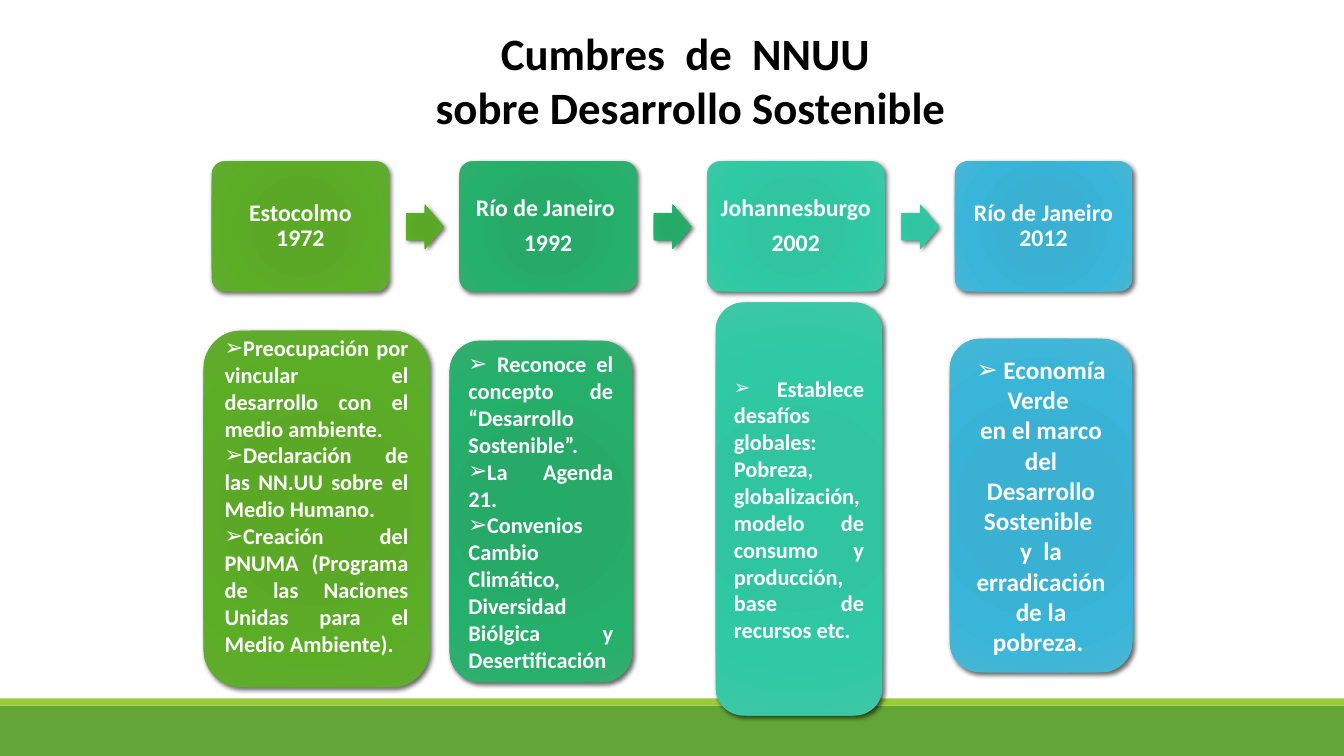
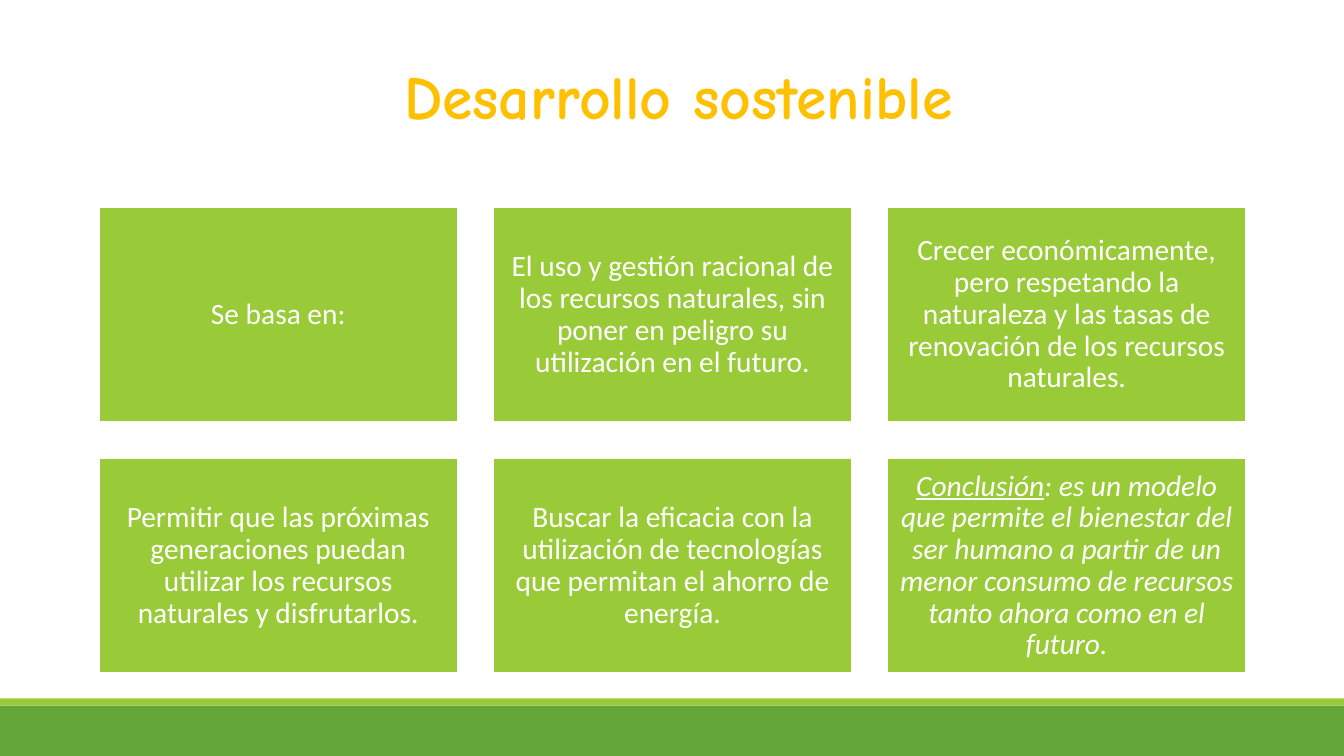
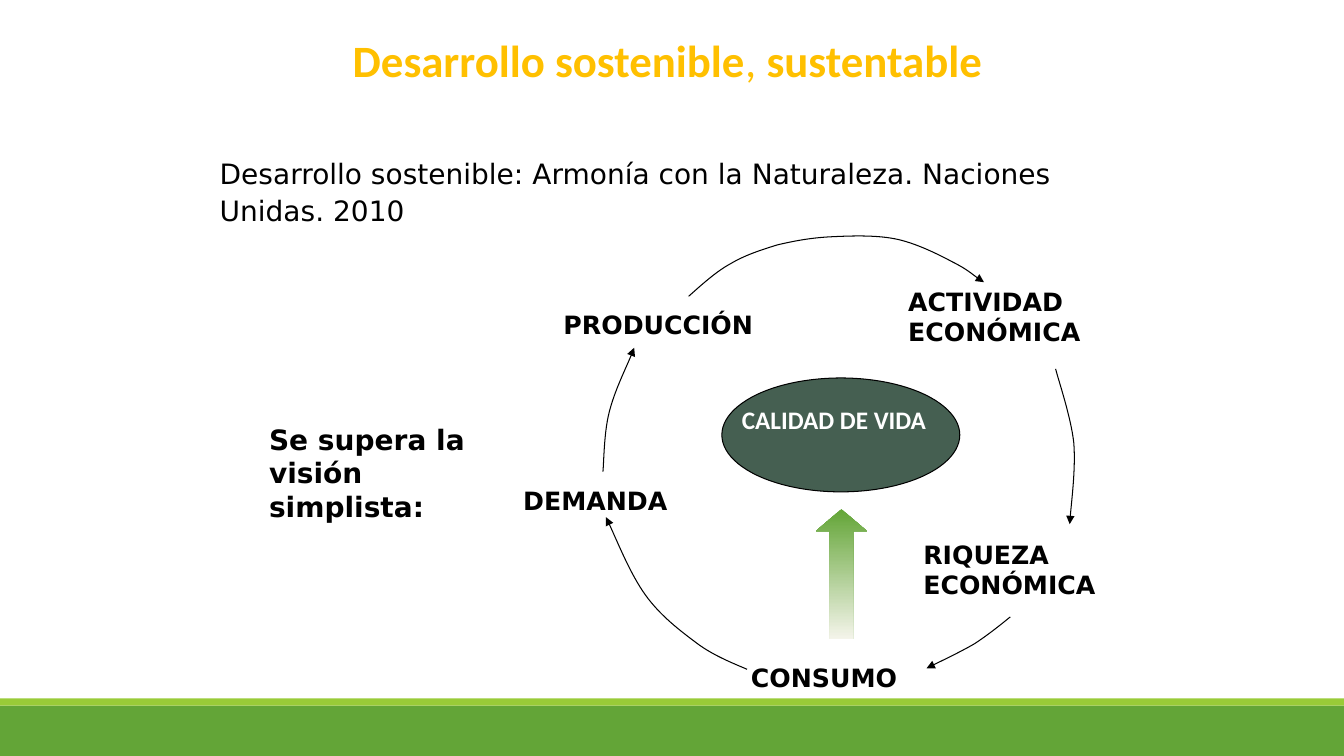
from lxml import etree
from pptx import Presentation
from pptx.dml.color import RGBColor
from pptx.enum.shapes import MSO_SHAPE
from pptx.enum.text import MSO_ANCHOR, MSO_AUTO_SIZE, PP_ALIGN
from pptx.oxml import parse_xml
from pptx.oxml.ns import nsdecls, qn
from pptx.util import Inches, Pt

RECTANGLE, ROUNDED, OVAL = MSO_SHAPE.RECTANGLE, MSO_SHAPE.ROUNDED_RECTANGLE, MSO_SHAPE.OVAL
RIGHT_ARROW, UP_ARROW = MSO_SHAPE.RIGHT_ARROW, MSO_SHAPE.UP_ARROW
LEFT, CENTER, JUSTIFY = PP_ALIGN.LEFT, PP_ALIGN.CENTER, PP_ALIGN.JUSTIFY
TOP, MIDDLE = MSO_ANCHOR.TOP, MSO_ANCHOR.MIDDLE
FIXED = MSO_AUTO_SIZE.NONE
TITLE_ONLY = 5
WIDTH, HEIGHT = 13.33, 7.5

COLORS = {
    "black": "000000", "white": "FFFFFF", "gold": "FFC000",
    "green": "63A537", "lime": "99CB38", "forest": "455F51", "ivory": "F4F4EA",
}
BANDS = [(7, 0.5, "green"), (6.93, 0.07, "lime")]

SUMMIT_TITLE = ["Cumbres  de  NNUU ", "sobre Desarrollo Sostenible"]
SUMMITS = [
    {
        "heading": ["Estocolmo\n1972"],
        "shades": ["59A924", "5BA827", "5BAD25", "62AB31"],
        "panel": (2.02, 3.28, 2.24, 3.54), "bottom": 0.32, "size": 16, "align": JUSTIFY, "bullets": 3,
        "details": [
            "Preocupación por vincular el desarrollo con el medio ambiente.",
            "Declaración de las NN.UU sobre el Medio Humano.",
            "Creación del PNUMA (Programa de las Naciones Unidas para el Medio Ambiente).",
        ],
    },
    {
        "heading": ["Río de Janeiro ", "1992"],
        "shades": ["24AB67", "27AA68", "24B06A", "31AD6F"],
        "panel": (4.46, 3.38, 1.81, 3.39), "bottom": 0.05, "size": 16, "align": JUSTIFY, "bullets": 3,
        "details": [
            " Reconoce el concepto de “Desarrollo Sostenible”.",
            "La Agenda 21.",
            "Convenios Cambio Climático, Diversidad Biólgica y Desertificación",
        ],
    },
    {
        "heading": ["Johannesburgo", "2002"],
        "shades": ["2EC5A1", "31C4A1", "2FCAA5", "3EC7A6"],
        "panel": (7.1, 3, 1.65, 4.1), "bottom": 0.05, "size": 16, "align": JUSTIFY, "bullets": 1,
        "details": [[
            (" ", {"size": Pt(14)}),
            ("Establece desafíos globales: Pobreza, globalización, modelo de consumo "
             "y producción, base de recursos etc.", {}),
        ]],
    },
    {
        "heading": ["Río de Janeiro\n2012"],
        "shades": ["37B1D3", "3AB1D2", "38B5D8", "48B7D5"],
        "panel": (9.42, 3.36, 1.81, 3.31), "bottom": 0.05, "size": 18, "align": CENTER, "bullets": 1,
        "details": [
            " Economía Verde ",
            "en el marco del Desarrollo Sostenible ",
            "y  la erradicación de la pobreza. ",
        ],
    },
]

PRINCIPLES = [
    "Se basa en:",
    "El uso y gestión racional de los recursos naturales, sin poner en peligro su utilización en el futuro.",
    "Crecer económicamente, pero respetando la naturaleza y las tasas de renovación de los recursos naturales.",
    "Permitir que las próximas generaciones puedan utilizar los recursos naturales y disfrutarlos.",
    "Buscar la eficacia con la utilización de tecnologías que permitan el ahorro de energía.",
    [
        ("Conclusión", {"italic": True, "underline": True}),
        (": es un modelo que permite el bienestar del ser humano a partir de un menor consumo "
         "de recursos tanto ahora como en el futuro.", {"italic": True}),
    ],
]

CYCLE_TITLE = [[
    ("Desarrollo sostenible", {}), (", ", {"bold": False}), ("sustentable ", {}),
]]
CYCLE_LABELS = [
    ("PRODUCCIÓN", (5.49, 3.02, 2.38, 0.4)),
    ("ACTIVIDAD ECONÓMICA", (8.91, 2.79, 3.13, 0.7)),
    ("RIQUEZA \nECONÓMICA", (9.06, 5.3, 3.13, 0.7)),
    ("DEMANDA", (5.09, 4.77, 2.09, 0.4)),
    ("CONSUMO", (7.35, 6.52, 1.94, 0.4)),
]
CYCLE_CURVES = [
    [(5.98, 4.68), (5.99, 4.58), (5.99, 4.3), (6.04, 4.1), (6.09, 3.89), (6.24, 3.59), (6.29, 3.45)],
    [(6.83, 2.94), (6.9, 2.88), (7.09, 2.7), (7.24, 2.62), (7.39, 2.53), (7.55, 2.48), (7.71, 2.43),
     (7.88, 2.39), (8.04, 2.36), (8.23, 2.35), (8.43, 2.34), (8.68, 2.33), (8.88, 2.37),
     (9.08, 2.41), (9.3, 2.52), (9.45, 2.6), (9.59, 2.67), (9.69, 2.76), (9.76, 2.8)],
    [(10.47, 3.66), (10.5, 3.78), (10.62, 4.13), (10.65, 4.39), (10.67, 4.64), (10.62, 5.03), (10.61, 5.2)],
    [(10.02, 6.12), (9.96, 6.17), (9.8, 6.3), (9.66, 6.39), (9.52, 6.47), (9.27, 6.59), (9.19, 6.63)],
    [(7.41, 6.64), (7.32, 6.6), (7.08, 6.51), (6.91, 6.38), (6.75, 6.26), (6.55, 6.11), (6.4, 5.9),
     (6.25, 5.69), (6.09, 5.29), (6.01, 5.13)],
]


def rgb(name):
    return RGBColor.from_string(COLORS[name])


def set_all(target, formats):
    for name, value in formats.items():
        setattr(target, name, value)


def write(box, paragraphs, size, color="white", font="Calibri", bold=False, align=LEFT,
          anchor=TOP, frame_formats=None, para_formats=None, bullets=0):
    frame = box.text_frame
    set_all(frame, {"word_wrap": True, "auto_size": FIXED, "vertical_anchor": anchor})
    set_all(frame, frame_formats or {})
    for index, content in enumerate(paragraphs):
        para = frame.add_paragraph() if index else frame.paragraphs[0]
        set_all(para, {"alignment": align, **(para_formats or {})})
        if index < bullets:
            properties = para._p.get_or_add_pPr()
            properties.set("marL", "0")
            properties.set("indent", "0")
            etree.SubElement(properties, qn("a:buFont")).set("typeface", "Arial")
            etree.SubElement(properties, qn("a:buChar")).set("char", "➢")
        for text, changes in [(content, {})] if isinstance(content, str) else content:
            for number, line in enumerate(text.split("\n")):
                if number:
                    para.add_line_break()
                span = para.add_run()
                span.text = line
                set_all(span.font, {"size": Pt(size), "name": font, "bold": bold, **changes})
                span.font.color.rgb = rgb(color)


def add_shape(page, kind, area, fill=None, line=None, line_width=0.75, adjustments=()):
    shape = page.shapes.add_shape(kind, *map(Inches, area))
    shape.shadow.inherit = False
    for index, value in enumerate(adjustments):
        shape.adjustments[index] = value
    if fill:
        shape.fill.solid()
        shape.fill.fore_color.rgb = rgb(fill)
    if line:
        shape.line.color.rgb = rgb(line)
        shape.line.width = Pt(line_width)
    else:
        shape.line.fill.background()
    return shape


def set_gradient(shape, stops, direction):
    marks = "".join(
        f'<a:gs pos="{share * 1000}"><a:srgbClr val="{color}"/></a:gs>' for share, color in stops)
    shape.element.spPr.insert(2, parse_xml(
        f'<a:gradFill {nsdecls("a")} rotWithShape="1"><a:gsLst>{marks}</a:gsLst>{direction}</a:gradFill>'))


def add_glossy(page, kind, area, shades, adjustments=()):
    shape = add_shape(page, kind, area, adjustments=adjustments)
    set_gradient(shape, zip((0, 34, 70, 100), shades),
                 '<a:path path="circle"><a:fillToRect l="100000" t="100000" r="100000" b="100000"/></a:path>')
    shape.element.spPr.find(qn("a:effectLst")).append(parse_xml(
        f'<a:outerShdw {nsdecls("a")} blurRad="{Pt(3.5)}" dist="{Pt(2)}" dir="2700000" algn="ctr" '
        f'rotWithShape="0"><a:srgbClr val="{COLORS["black"]}"><a:alpha val="60000"/></a:srgbClr></a:outerShdw>'))
    return shape


def add_text(page, area, paragraphs, size, **style):
    write(page.shapes.add_textbox(*map(Inches, area)), paragraphs, size, **style)


def add_page(deck, title, area, size, color="gold", font="Calibri"):
    page = deck.slides.add_slide(deck.slide_layouts[TITLE_ONLY])
    box = page.shapes.title
    set_all(box, dict(zip(("left", "top", "width", "height"), map(Inches, area))))
    write(box, title, size, color=color, font=font, bold=True, align=CENTER)
    return page


def add_bands(deck, page):
    tree = deck.slide_layouts[TITLE_ONLY].shapes.element
    for index, (top, height, color) in enumerate(BANDS):
        band = add_shape(page, RECTANGLE, (0, top, WIDTH, height), color)
        tree.insert(2 + index, band.element)


def margins(size):
    return {f"margin_{side}": Inches(size) for side in ("left", "top", "right", "bottom")}


def add_curve(page, points):
    start, *corners = [tuple(map(Inches, point)) for point in points]
    builder = page.shapes.build_freeform(*start)
    builder.add_line_segments(corners, close=False)
    curve = builder.convert_to_shape()
    curve.shadow.inherit = False
    curve.fill.background()
    curve.line.color.rgb = rgb("black")
    curve.line.width = Pt(0.75)
    properties = curve.element.spPr
    segments = list(properties.iter(qn("a:lnTo")))
    for index in range(0, len(segments), 3):
        bend = etree.SubElement(segments[index].getparent(), qn("a:cubicBezTo"))
        for segment in segments[index:index + 3]:
            bend.append(segment[0])
            segment.getparent().remove(segment)
    etree.SubElement(properties.find(qn("a:ln")), qn("a:tailEnd")).set("type", "triangle")


def build_summits(deck):
    page = add_page(deck, SUMMIT_TITLE, (2.59, 0.21, 8.52, 1.18), 32, color="black")
    add_bands(deck, page)
    first, last = 2.1, 9.47
    pitch = (last - first) / (len(SUMMITS) - 1)
    for index, summit in enumerate(SUMMITS):
        x, shades = first + index * pitch, summit["shades"]
        card = add_glossy(page, ROUNDED, (x, 1.6, 1.76, 1.29), shades, (0.1,))
        write(card, summit["heading"], 17, bold=True, align=CENTER, anchor=MIDDLE,
              frame_formats=margins(0.07), para_formats={"line_spacing": 0.9, "space_after": Pt(6)})
        if index < len(SUMMITS) - 1:
            add_glossy(page, RIGHT_ARROW, (x + 1.93, 2.03, 0.37, 0.44), shades, (0.6, 0.5))
        panel = add_glossy(page, ROUNDED, summit["panel"], shades)
        write(panel, summit["details"], summit["size"], bold=True, align=summit["align"], anchor=MIDDLE,
              frame_formats={"margin_bottom": Inches(summit["bottom"])}, bullets=summit["bullets"])


def build_principles(deck):
    page = add_page(deck, ["Desarrollo sostenible"], (0.77, 0.52, 11.92, 0.8), 44, font="Comic Neue")
    for index, principle in enumerate(PRINCIPLES):
        row, column = divmod(index, 3)
        area = (0.98 + column * 3.91, 2.06 + row * 2.49, 3.56, 2.13)
        tile = add_shape(page, RECTANGLE, area, "lime", "white", 1.25)
        write(tile, [principle], 21, align=CENTER, anchor=MIDDLE,
              frame_formats=margins(0.09), para_formats={"line_spacing": 0.9})


def build_cycle(deck):
    page = add_page(deck, CYCLE_TITLE, (2.17, 0.27, 9, 0.85), 32)
    plain = {"color": "black", "font": "DejaVu Sans"}
    add_text(page, (2.08, 1.47, 9.31, 0.81),
             ["Desarrollo sostenible: Armonía con la Naturaleza. Naciones Unidas. 2010"],
             20, para_formats={"line_spacing": 1.1}, **plain)
    add_text(page, (2.57, 4.14, 2.6, 1.11), ["Se supera la visión simplista:"], 20, bold=True, **plain)
    for curve in CYCLE_CURVES:
        add_curve(page, curve)
    for label, area in CYCLE_LABELS:
        add_text(page, area, [label], 18, bold=True, **plain)
    add_shape(page, OVAL, (7.16, 3.75, 2.36, 1.13), "forest", "black")
    add_text(page, (7.26, 3.96, 2.16, 0.4), ["CALIDAD DE VIDA"], 18, bold=True)
    arrow = add_shape(page, UP_ARROW, (8.09, 5.05, 0.51, 1.29), adjustments=(0.455, 0.432))
    set_gradient(arrow, [(0, COLORS["green"]), (100, COLORS["ivory"])], '<a:lin ang="5400000" scaled="1"/>')


def main():
    deck = Presentation()
    deck.slide_width, deck.slide_height = Inches(WIDTH), Inches(HEIGHT)
    build_summits(deck)
    build_principles(deck)
    build_cycle(deck)
    deck.save("out.pptx")


if __name__ == "__main__":
    main()
